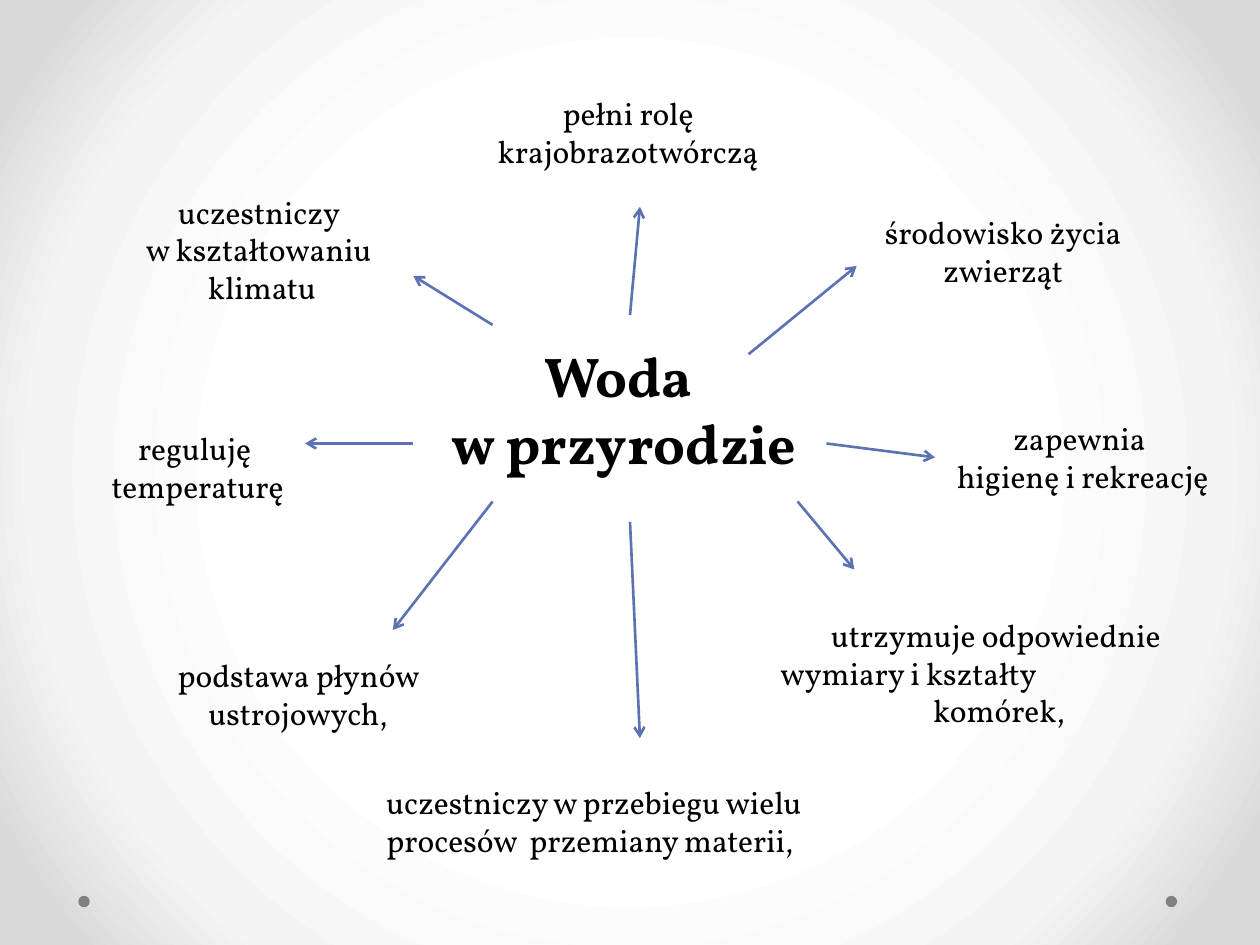
from pptx import Presentation
from pptx import util as u
from pptx.dml.color import RGBColor
from pptx.enum import shapes, text
from pptx.oxml import parse_xml
from pptx.oxml.ns import nsdecls

FONT = "Vollkorn"
W, H = 25.4, 19.05
STOPS = [(50, "FFFFFF"), (76, "F4F4F4"), (92, "DADADA")]
TITLE = (8.74, 6.76, 7.67, 3.0)
LABELS = [
    ("środowisko życia \nzwierząt ", 17.48, 4.17, 5.61, 1.8),
    ("podstawa płynów \nustrojowych, ", 3.18, 13.11, 5.79, 1.8),
    ("reguluję \ntemperaturę", 1.98, 8.53, 4.01, 1.8),
    ("pełni rolę \nkrajobrazotwórczą ", 9.73, 1.78, 5.99, 1.8),
    ("zapewnia\n higienę i rekreację", 18.85, 8.33, 5.82, 1.8),
    ("uczestniczy \nw kształtowaniu \nklimatu", 2.59, 3.76, 5.38, 2.57),
]
ARROWS = [
    (16.08, 10.11, 17.22, 11.48),
    (9.93, 6.55, 8.33, 5.56),
    (15.09, 7.14, 17.27, 5.36),
    (8.33, 8.94, 6.15, 8.94),
    (16.66, 8.94, 18.85, 9.22),
    (12.7, 10.52, 12.9, 14.88),
    (9.93, 10.11, 7.92, 12.7),
    (12.7, 6.35, 12.9, 4.17),
]


def color(fmt, value):
    fmt.rgb = RGBColor.from_string(value)


def place(sp, x, y, w, h):
    sp.left, sp.top, sp.width, sp.height = (u.Cm(v) for v in (x, y, w, h))


def format_text(tf, size, bold=False, wrap=False, align=text.PP_ALIGN.CENTER):
    tf.word_wrap = wrap
    tf.auto_size = text.MSO_AUTO_SIZE.NONE
    tf.vertical_anchor = text.MSO_ANCHOR.TOP
    for p in tf.paragraphs:
        p.alignment = align
        for r in p.runs:
            r.font.name, r.font.size, r.font.bold = FONT, u.Pt(size), bold
            color(r.font.color, "000000")


def add_label(s, wording, x, y, w, h, **style):
    sp = s.shapes.add_textbox(u.Cm(x), u.Cm(y), u.Cm(w), u.Cm(h))
    tf = sp.text_frame
    lines = wording if isinstance(wording, list) else [wording]
    for i, line in enumerate(lines):
        p = tf.add_paragraph() if i else tf.paragraphs[0]
        p.text = line
    format_text(tf, 18, **style)
    return tf


def add_arrow(s, x1, y1, x2, y2):
    sp = s.shapes.add_connector(
        shapes.MSO_CONNECTOR.STRAIGHT, u.Cm(x1), u.Cm(y1), u.Cm(x2), u.Cm(y2))
    color(sp.line.color, "5C72B2")
    sp.line.width = u.Pt(1.5)
    sp.line._get_or_add_ln().append(
        parse_xml(f'<a:tailEnd {nsdecls("a")} type="arrow"/>'))
    sp._element.spPr.append(parse_xml(f'<a:effectLst {nsdecls("a")}/>'))


def add_background(s, x, y, w, h):
    stops = "".join(f'<a:gs pos="{pos * 1000}"><a:srgbClr val="{c}"/></a:gs>'
                    for pos, c in STOPS)
    s._element.cSld.insert(0, parse_xml(
        f'<p:bg {nsdecls("p", "a")}><p:bgPr><a:gradFill rotWithShape="1">'
        f'<a:gsLst>{stops}</a:gsLst><a:path path="circle">'
        '<a:fillToRect l="50000" t="50000" r="50000" b="50000"/></a:path>'
        '</a:gradFill><a:effectLst/></p:bgPr></p:bg>'))
    for dx in (1.58, w - 1.9):
        sp = s.shapes.add_shape(shapes.MSO_SHAPE.OVAL, u.Cm(x + dx),
                                u.Cm(y + h - 0.99), u.Cm(0.23), u.Cm(0.23))
        sp.shadow.inherit = False
        sp.fill.solid()
        color(sp.fill.fore_color, "808080")
        sp.line.fill.background()


def add_mind_map(s, x, y):
    title = s.shapes.title
    tx, ty, tw, th = TITLE
    place(title, x + tx, y + ty, tw, th)
    title.text_frame.paragraphs[0].text = "Woda \nw przyrodzie "
    format_text(title.text_frame, 32, bold=True)

    for wording, lx, ly, w, h in LABELS:
        add_label(s, wording, x + lx, y + ly, w, h)
    add_label(s, "uczestniczy w przebiegu wielu procesów  przemiany materii,",
              x + 7.54, y + 15.67, 9.73, 1.8,
              wrap=True, align=text.PP_ALIGN.LEFT)
    tf = add_label(s, ["utrzymuje odpowiednie ", "wymiary i kształty", "komórek,"],
                   x + 14.88, y + 12.29, 10.52, 2.57, wrap=True)
    p = tf.paragraphs[1]
    p.alignment = text.PP_ALIGN.LEFT
    p._p.get_or_add_pPr().set("marL", str(u.Cm(0.6)))

    for x1, y1, x2, y2 in ARROWS:
        add_arrow(s, x + x1, y + y1, x + x2, y + y2)


def main():
    prs = Presentation()
    prs.slide_width, prs.slide_height = u.Cm(W), u.Cm(H)
    s = prs.slides.add_slide(prs.slide_layouts[5])
    add_background(s, 0, 0, W, H)
    add_mind_map(s, 0, 0)
    prs.save("out.pptx")


if __name__ == "__main__":
    main()
